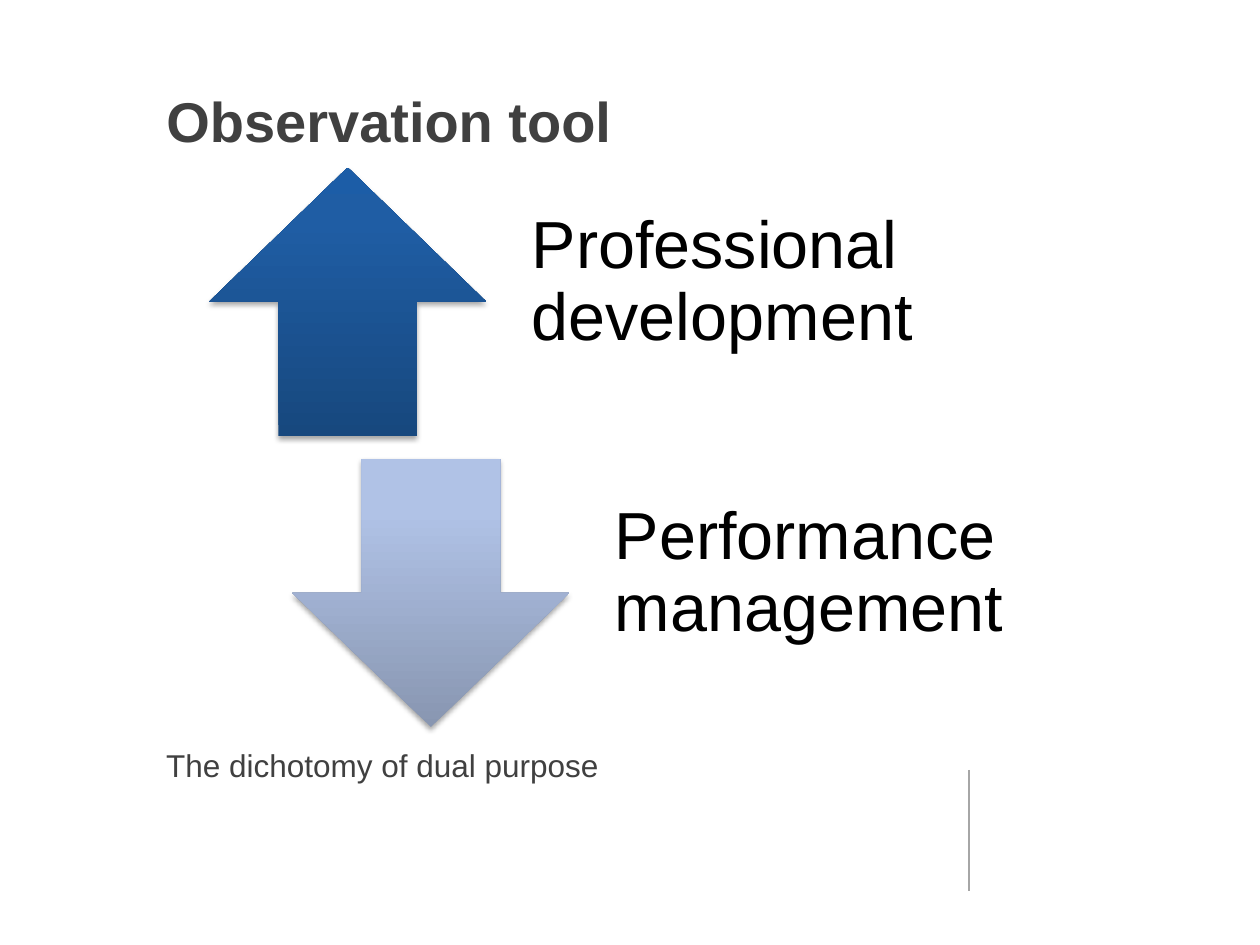
"""Build the slide on the two purposes of an observation tool."""
from dataclasses import dataclass

from lxml import etree
from pptx import Presentation
from pptx.dml.color import RGBColor
from pptx.enum.shapes import MSO_CONNECTOR, MSO_SHAPE
from pptx.enum.text import MSO_ANCHOR, PP_ALIGN
from pptx.oxml import parse_xml
from pptx.oxml.ns import nsdecls, qn
from pptx.util import Inches, Pt

UP, DOWN = MSO_SHAPE.UP_ARROW, MSO_SHAPE.DOWN_ARROW
TOP, MIDDLE = MSO_ANCHOR.TOP, MSO_ANCHOR.MIDDLE
LEFT = PP_ALIGN.LEFT
STRAIGHT = MSO_CONNECTOR.STRAIGHT
FONT = "Arial"
COLORS = {"text": "404040", "label": "000000", "rule": "A6A6A6", "shadow": "000000"}
STOPS = (0, 80, 100)
ARROW_W, ROW_H, LABEL_W = 2.2, 2.13, 3.73
GAP = 0.06
X, Y = 1.66, 1.33
STEP_X, STEP_Y = 0.66, 2.31


@dataclass
class Purpose:
    label: str
    kind: MSO_SHAPE
    shades: tuple[str, str, str]


PURPOSES = (
    Purpose("Professional development", UP, ("17487E", "1F5DA4", "1C5DA7")),
    Purpose("Performance management", DOWN, ("8896B1", "B0C2E6", "B0C3E8")),
)


def write(shape, text: str, size: int, color: str, anchor, bold: bool = False):
    """Put one left-aligned paragraph into a shape and return it."""
    frame = shape.text_frame
    frame.word_wrap = True
    frame.vertical_anchor = anchor
    frame.text = text
    para = frame.paragraphs[0]
    para.alignment = LEFT
    font = para.font
    font.name, font.size, font.bold = FONT, Pt(size), bold
    font.color.rgb = RGBColor.from_string(COLORS[color])
    return para


def shade(shape, shades: tuple[str, str, str]) -> None:
    """Give a shape an upward gradient and a soft shadow below."""
    shape.line.fill.background()
    shape.shadow.inherit = False
    props = shape._element.spPr
    stops = "".join(
        f'<a:gs pos="{pos * 1000}"><a:srgbClr val="{color}"/></a:gs>'
        for pos, color in zip(STOPS, shades)
    )
    fill = parse_xml(
        f'<a:gradFill {nsdecls("a")} rotWithShape="1"><a:gsLst>{stops}</a:gsLst>'
        '<a:lin ang="16200000" scaled="0"/></a:gradFill>'
    )
    props.find(qn("a:prstGeom")).addnext(fill)
    shadow = parse_xml(
        f'<a:outerShdw {nsdecls("a")} blurRad="{Pt(3.1)}" dist="{Pt(1.8)}" '
        f'dir="5400000" rotWithShape="0"><a:srgbClr val="{COLORS["shadow"]}">'
        '<a:alpha val="35000"/></a:srgbClr></a:outerShdw>'
    )
    props.find(qn("a:effectLst")).append(shadow)


def draw(slide, item: Purpose, left: float, top: float) -> None:
    """Draw an arrow with its label on the right."""
    arrow = slide.shapes.add_shape(
        item.kind, Inches(left), Inches(top), Inches(ARROW_W), Inches(ROW_H)
    )
    shade(arrow, item.shades)
    box = slide.shapes.add_textbox(
        Inches(left + ARROW_W + GAP), Inches(top), Inches(LABEL_W), Inches(ROW_H)
    )
    para = write(box, item.label, 38, "label", MIDDLE)
    para.line_spacing = 0.9
    frame = box.text_frame
    frame.margin_left = frame.margin_right = frame.margin_bottom = Inches(0.3)
    frame.margin_top = 0


def main() -> None:
    """Build and save the slide."""
    deck = Presentation()
    deck.slide_width, deck.slide_height = Inches(10), Inches(7.5)
    slide = deck.slides.add_slide(deck.slide_layouts[5])

    rule = slide.shapes.add_connector(
        STRAIGHT, Inches(7.69), Inches(6.11), Inches(7.69), Inches(7.07)
    )
    rule.line.color.rgb = RGBColor.from_string(COLORS["rule"])
    rule.line.width = Pt(1.5)
    etree.SubElement(rule._element.spPr, qn("a:effectLst"))

    note = slide.shapes.add_textbox(
        Inches(1.22), Inches(5.87), Inches(6.22), Inches(0.85)
    )
    write(note, "The dichotomy of dual purpose", 18, "text", TOP)

    title = slide.shapes.title
    title.left, title.top = Inches(1.22), Inches(0.6)
    title.width, title.height = Inches(7.56), Inches(0.71)
    write(title, "Observation tool", 32, "text", MIDDLE, bold=True)

    for i, item in enumerate(PURPOSES):
        draw(slide, item, X + i * STEP_X, Y + i * STEP_Y)

    deck.save("out.pptx")


if __name__ == "__main__":
    main()
